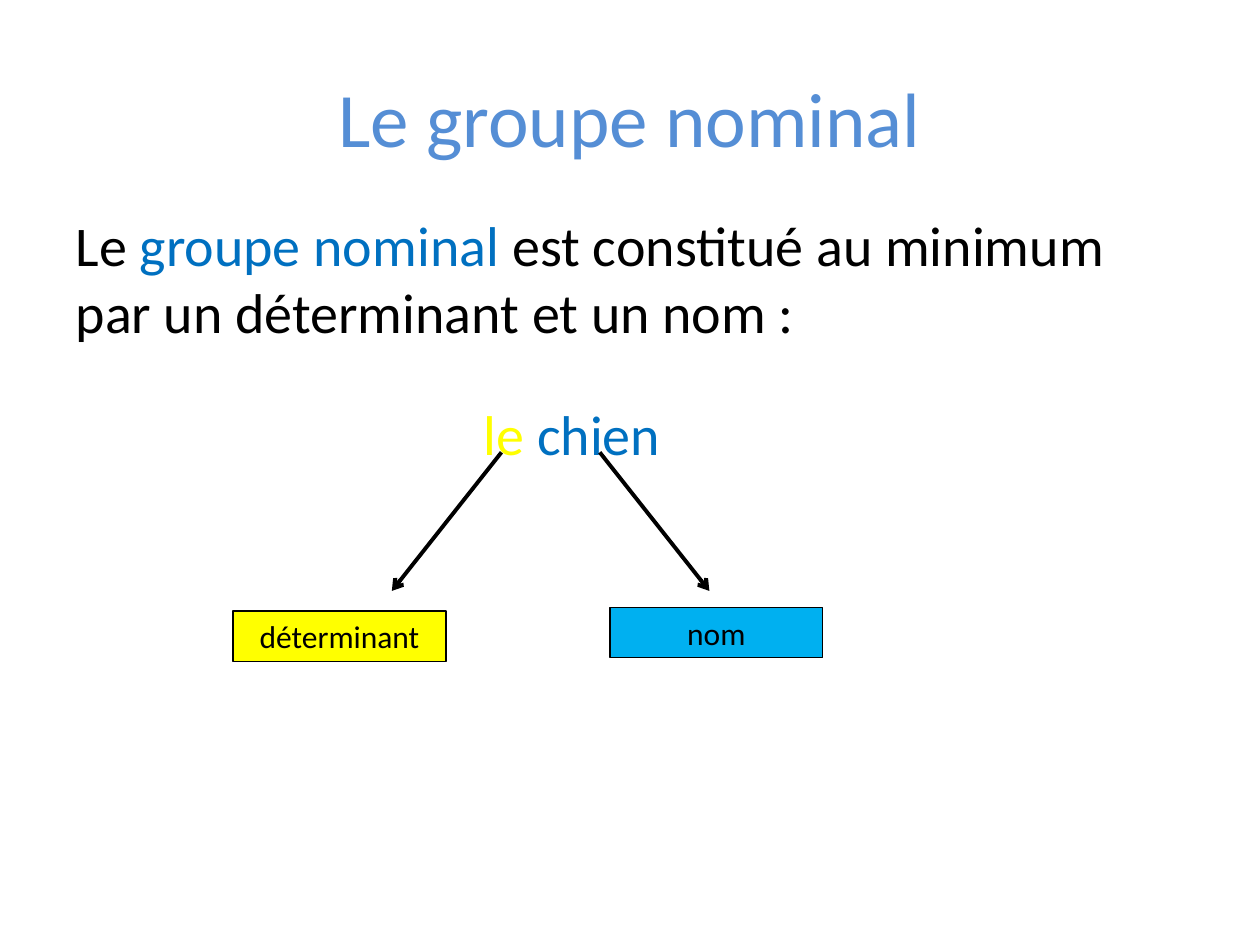
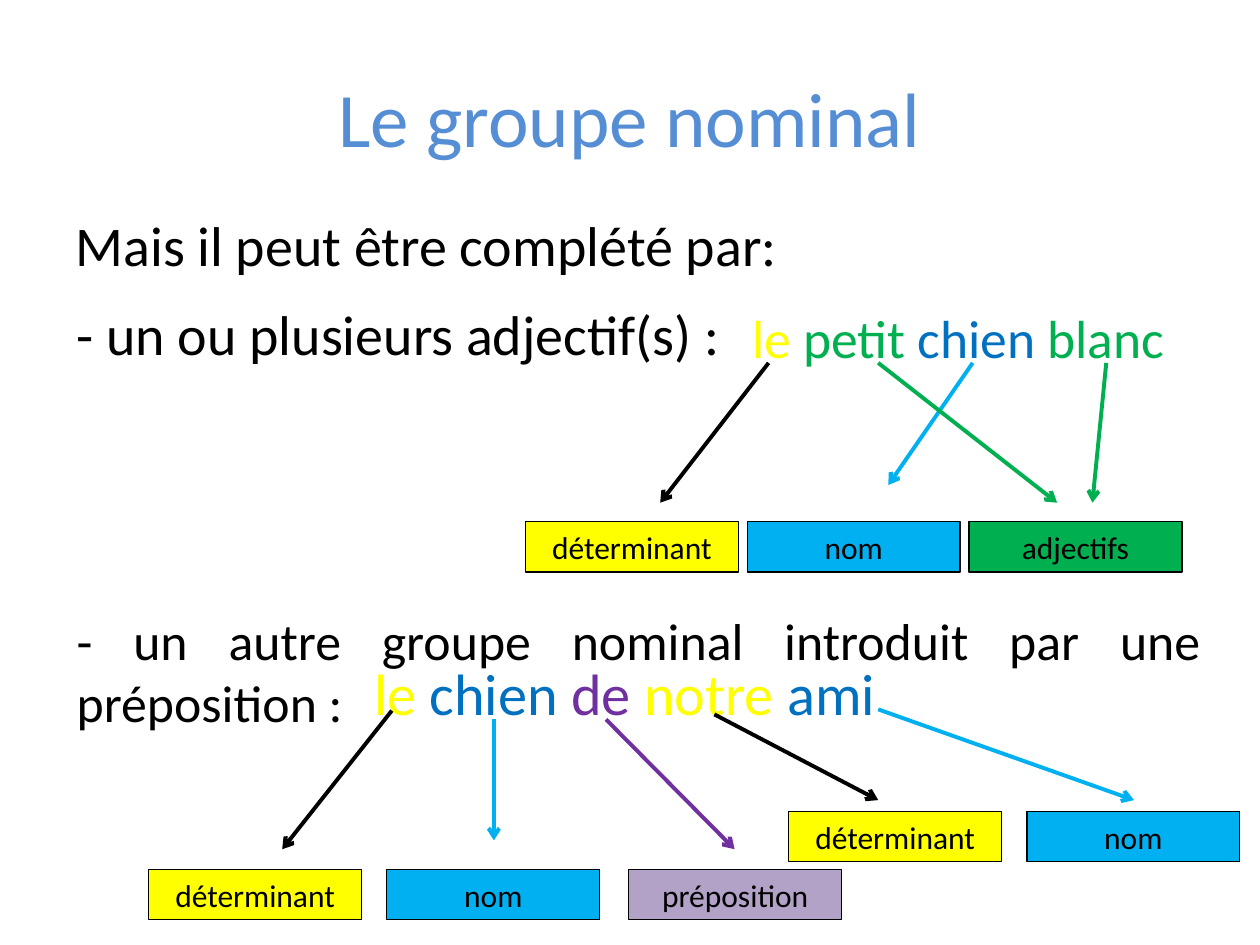
from lxml.etree import SubElement
from pptx import Presentation
from pptx.dml.color import RGBColor
from pptx.enum.shapes import MSO_CONNECTOR, MSO_SHAPE
from pptx.enum.text import MSO_ANCHOR, MSO_AUTO_SIZE, PP_ALIGN
from pptx.oxml.ns import qn
from pptx.util import Inches, Pt

BLACK = RGBColor(0x00, 0x00, 0x00)
TITLE_BLUE = RGBColor(0x55, 0x8E, 0xD5)
WORD_BLUE = RGBColor(0x00, 0x70, 0xC0)
LABEL_BLUE = RGBColor(0x00, 0xB0, 0xF0)
YELLOW = RGBColor(0xFF, 0xFF, 0x00)
GREEN = RGBColor(0x00, 0xB0, 0x50)
PURPLE = RGBColor(0x70, 0x30, 0xA0)
LILAC = RGBColor(0xB3, 0xA2, 0xC7)

FONT = "Calibri"
TITLE = "Le groupe nominal"
LABEL_WIDTH, LABEL_HEIGHT = 1.69, 0.4
DETERMINER = ("déterminant", YELLOW)
NOUN = ("nom", LABEL_BLUE)
ADJECTIVES = ("adjectifs", GREEN)
PREPOSITION = ("préposition", LILAC)


def write(shape, text, size=32, color=BLACK, align=PP_ALIGN.LEFT, anchor=MSO_ANCHOR.TOP):
    frame = shape.text_frame
    frame.word_wrap = True
    frame.auto_size = MSO_AUTO_SIZE.NONE
    frame.vertical_anchor = anchor
    paragraph = frame.paragraphs[0]
    paragraph.alignment = align
    paragraph.space_before = Pt(0)
    pieces = [(text, color)] if isinstance(text, str) else text
    for words, word_color in pieces:
        run = paragraph.add_run()
        run.text = words
        run.font.name = FONT
        run.font.size = Pt(size)
        run.font.color.rgb = word_color
    return paragraph


def place(shape, box):
    shape.left, shape.top, shape.width, shape.height = map(Inches, box)


def add_text(slide, box, text, **text_format):
    write(slide.shapes.add_textbox(*map(Inches, box)), text, **text_format)


def add_lesson_slide(presentation, introduction, height):
    slide = presentation.slides.add_slide(presentation.slide_layouts[1])
    title, body = slide.placeholders
    place(title, (0.5, 0.3, 9, 1.25))
    write(title, TITLE, size=44, color=TITLE_BLUE, align=PP_ALIGN.CENTER,
          anchor=MSO_ANCHOR.MIDDLE)
    place(body, (0.5, 1.62, 9, height))
    properties = write(body, introduction)._p.get_or_add_pPr()
    properties.set("marL", "0")
    properties.set("indent", "0")
    SubElement(properties, qn("a:buNone"))
    return slide


def add_arrow(slide, start, run, drop, color=BLACK):
    x, y = start
    arrow = slide.shapes.add_connector(
        MSO_CONNECTOR.STRAIGHT, Inches(x), Inches(y), Inches(x + run), Inches(y + drop))
    arrow.line.color.rgb = color
    arrow.line.width = Pt(2.25)
    SubElement(arrow.line._get_or_add_ln(), qn("a:tailEnd"), type="arrow")
    SubElement(arrow._element.spPr, qn("a:effectLst"))


def add_label(slide, left, top, kind):
    text, fill = kind
    label = slide.shapes.add_shape(
        MSO_SHAPE.RECTANGLE, *map(Inches, (left, top, LABEL_WIDTH, LABEL_HEIGHT)))
    label.shadow.inherit = False
    label.fill.solid()
    label.fill.fore_color.rgb = fill
    label.line.color.rgb = BLACK
    label.line.width = Pt(0.75)
    write(label, text, size=18, align=PP_ALIGN.CENTER, anchor=MSO_ANCHOR.MIDDLE)


def add_example(slide, box, words, size, arrows, labels):
    left, top = box[:2]
    add_text(slide, box, words, size=size)
    for x, y, run, drop, color in arrows:
        add_arrow(slide, (left + x, top + y), run, drop, color)
    for x, y, kind in labels:
        add_label(slide, left + x, top + y, kind)


def build_minimum_slide(presentation):
    slide = add_lesson_slide(presentation, [
        ("Le ", BLACK), ("groupe nominal ", WORD_BLUE),
        ("est constitué au minimum par un déterminant et un nom :", BLACK)], 1.26)
    add_example(
        slide, (3.74, 3.12, 1.73, 0.63), [("le ", YELLOW), ("chien", WORD_BLUE)], 32,
        arrows=[(0.24, 0.47, -0.87, 1.1, BLACK), (1.02, 0.47, 0.87, 1.1, BLACK)],
        labels=[(-1.89, 1.73, DETERMINER), (1.1, 1.7, NOUN)])


def build_complements_slide(presentation):
    slide = add_lesson_slide(presentation, "Mais il peut être complété par:", 0.71)

    add_text(slide, (0.51, 2.33, 9, 0.71), "- un ou plusieurs adjectif(s) :")
    adjective_labels = [(-1.7 + 1.76 * column, 1.77, kind)
                        for column, kind in enumerate((DETERMINER, NOUN, ADJECTIVES))]
    add_example(
        slide, (5.87, 2.37, 3.65, 0.63),
        [("le ", YELLOW), ("petit ", GREEN), ("chien ", WORD_BLUE), ("blanc", GREEN)], 30.6,
        arrows=[(0.23, 0.51, -0.86, 1.11, BLACK), (1.85, 0.51, -0.67, 0.97, LABEL_BLUE),
                (1.1, 0.51, 1.42, 1.11, GREEN), (2.91, 0.51, -0.11, 1.11, GREEN)],
        labels=adjective_labels)

    add_text(slide, (0.51, 4.78, 9.13, 1.02),
             "- un autre groupe nominal introduit par une préposition :",
             size=29.6, align=PP_ALIGN.JUSTIFY)
    add_example(
        slide, (2.87, 5.17, 5.28, 0.63),
        [("le ", YELLOW), ("chien ", WORD_BLUE), ("de ", PURPLE),
         ("notre ", YELLOW), ("ami", WORD_BLUE)], 33.3,
        arrows=[(0.24, 0.47, -0.87, 1.1, BLACK), (1.05, 0.54, 0, 0.96, LABEL_BLUE),
                (1.94, 0.54, 1.02, 1.03, PURPLE), (2.8, 0.5, 1.3, 0.68, BLACK),
                (4.1, 0.46, 2.03, 0.72, LABEL_BLUE)],
        labels=[(-1.69, 1.73, DETERMINER), (0.2, 1.73, NOUN), (2.12, 1.73, PREPOSITION),
                (3.39, 1.27, DETERMINER), (5.28, 1.27, NOUN)])


def main():
    presentation = Presentation()
    presentation.slide_width = Inches(10)
    presentation.slide_height = Inches(7.5)
    build_minimum_slide(presentation)
    build_complements_slide(presentation)
    presentation.save("out.pptx")


if __name__ == "__main__":
    main()
